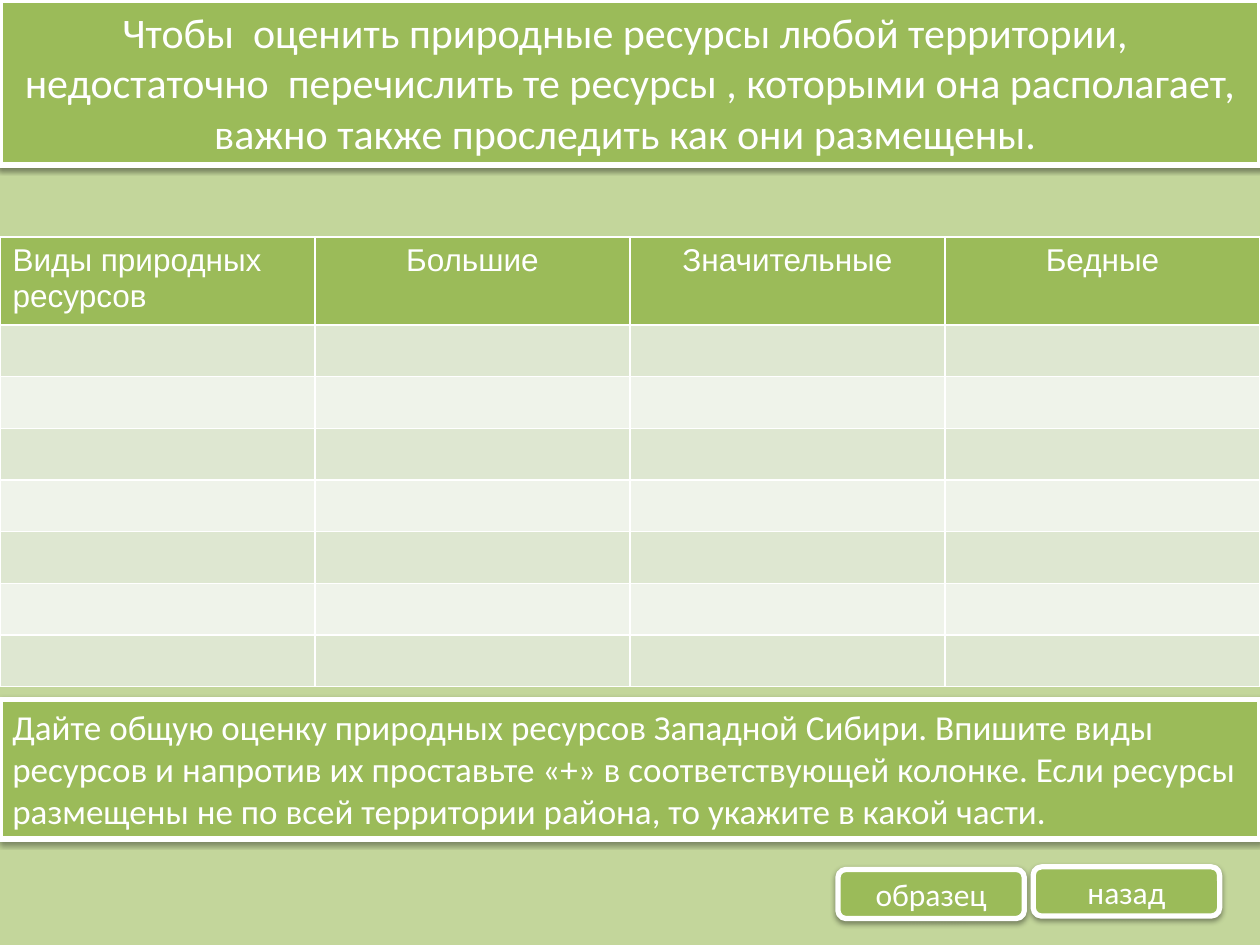
from typing import NamedTuple

from lxml import etree
from pptx import Presentation
from pptx import util as u
from pptx.dml.color import RGBColor
from pptx.enum import shapes, text
from pptx.oxml import ns

COLORS = {
    "background": "C3D69B",
    "accent": "9BBB59",
    "white": "FFFFFF",
    "band_dark": "DEE7D1",
    "band_light": "EFF3EA",
    "shadow": "000000",
}
WIDTH, HEIGHT = u.Inches(10), u.Inches(7.5)
COLUMNS = ["Виды природных ресурсов", "Большие", "Значительные", "Бедные"]
BODY_ROWS = 7
HEADER_HEIGHT, ROW_HEIGHT = u.Inches(0.7), u.Inches(0.41)
LEFT, CENTER = text.PP_ALIGN.LEFT, text.PP_ALIGN.CENTER
TOP, MIDDLE = text.MSO_ANCHOR.TOP, text.MSO_ANCHOR.MIDDLE


class Box(NamedTuple):
    """Position and size in inches."""
    left: float
    top: float
    width: float
    height: float


class Panel(NamedTuple):
    kind: shapes.MSO_SHAPE
    box: Box
    wording: str
    size: int
    align: text.PP_ALIGN
    anchor: text.MSO_ANCHOR


HEADING = Panel(
    shapes.MSO_SHAPE.RECTANGLE, Box(0, 0, 10, 1.31),
    "Чтобы  оценить природные ресурсы любой территории,  недостаточно  "
    "перечислить те ресурсы , которыми она располагает, важно также "
    "проследить как они размещены. ", 24, CENTER, TOP)
TASK = Panel(
    shapes.MSO_SHAPE.RECTANGLE, Box(0, 5.55, 10, 1.11),
    "Дайте общую оценку природных ресурсов Западной Сибири. Впишите виды "
    "ресурсов и напротив их проставьте «+» в соответствующей колонке. Если "
    "ресурсы размещены не по всей территории района, то укажите в какой "
    "части.", 20, LEFT, TOP)
BUTTONS = [
    Panel(shapes.MSO_SHAPE.ROUNDED_RECTANGLE, Box(left, top, 1.48, 0.39),
          wording, 18, CENTER, MIDDLE)
    for left, top, wording in [(6.65, 6.9, "образец"), (8.2, 6.88, "назад")]
]


def rgb(name: str) -> RGBColor:
    return RGBColor.from_string(COLORS[name])


def write(frame, wording: str, *, size: int, font: str = "Calibri",
          align=LEFT, color: str = "white") -> None:
    paragraph = frame.paragraphs[0]
    paragraph.alignment = align
    run = paragraph.add_run()
    run.text = wording
    run.font.size, run.font.name = u.Pt(size), font
    run.font.bold = False
    run.font.color.rgb = rgb(color)


def add_shadow(shape) -> None:
    shape.shadow.inherit = False
    effects = shape._element.spPr.find(ns.qn("a:effectLst"))
    outer = etree.SubElement(
        effects, ns.qn("a:outerShdw"), blurRad="40000", dist="20000",
        dir="5400000", rotWithShape="0")
    tint = etree.SubElement(outer, ns.qn("a:srgbClr"), val=COLORS["shadow"])
    etree.SubElement(tint, ns.qn("a:alpha"), val="38000")


def format_panel(shape, panel: Panel) -> None:
    shape.left, shape.top, shape.width, shape.height = map(u.Inches, panel.box)
    shape.fill.solid()
    shape.fill.fore_color.rgb = rgb("accent")
    shape.line.color.rgb = rgb("white")
    shape.line.width = u.Pt(3)
    add_shadow(shape)
    frame = shape.text_frame
    frame.word_wrap = True
    frame.auto_size = text.MSO_AUTO_SIZE.NONE
    frame.vertical_anchor = panel.anchor
    write(frame, panel.wording, size=panel.size, align=panel.align)


def add_panel(slide, panel: Panel) -> None:
    shape = slide.shapes.add_shape(panel.kind, *map(u.Inches, panel.box))
    format_panel(shape, panel)


def format_cell(cell, fill: str) -> None:
    properties = cell._tc.get_or_add_tcPr()
    for side in ("lnL", "lnR", "lnT", "lnB"):
        border = etree.SubElement(properties, ns.qn(f"a:{side}"),
                                  w=str(u.Pt(1)))
        paint = etree.SubElement(border, ns.qn("a:solidFill"))
        etree.SubElement(paint, ns.qn("a:srgbClr"), val=COLORS["white"])
    cell.fill.solid()
    cell.fill.fore_color.rgb = rgb(fill)


def add_resource_table(slide) -> None:
    table = slide.shapes.add_table(
        BODY_ROWS + 1, len(COLUMNS), 0, u.Inches(1.88), WIDTH,
        HEADER_HEIGHT + BODY_ROWS * ROW_HEIGHT).table
    for index, row in enumerate(table.rows):
        row.height = ROW_HEIGHT if index else HEADER_HEIGHT
        band = "band_dark" if index % 2 else "band_light"
        for cell in row.cells:
            format_cell(cell, band if index else "accent")
    for index, wording in enumerate(COLUMNS):
        write(table.cell(0, index).text_frame, wording, size=18, font="Arial",
              align=CENTER if index else LEFT)


def main() -> None:
    deck = Presentation()
    deck.slide_width, deck.slide_height = WIDTH, HEIGHT
    slide = deck.slides.add_slide(deck.slide_layouts[5])
    slide.background.fill.solid()
    slide.background.fill.fore_color.rgb = rgb("background")

    # Heading
    format_panel(slide.shapes.title, HEADING)

    # Table to fill in
    add_resource_table(slide)

    # Task and navigation buttons
    for panel in [TASK, *BUTTONS]:
        add_panel(slide, panel)

    deck.save("out.pptx")


if __name__ == "__main__":
    main()
